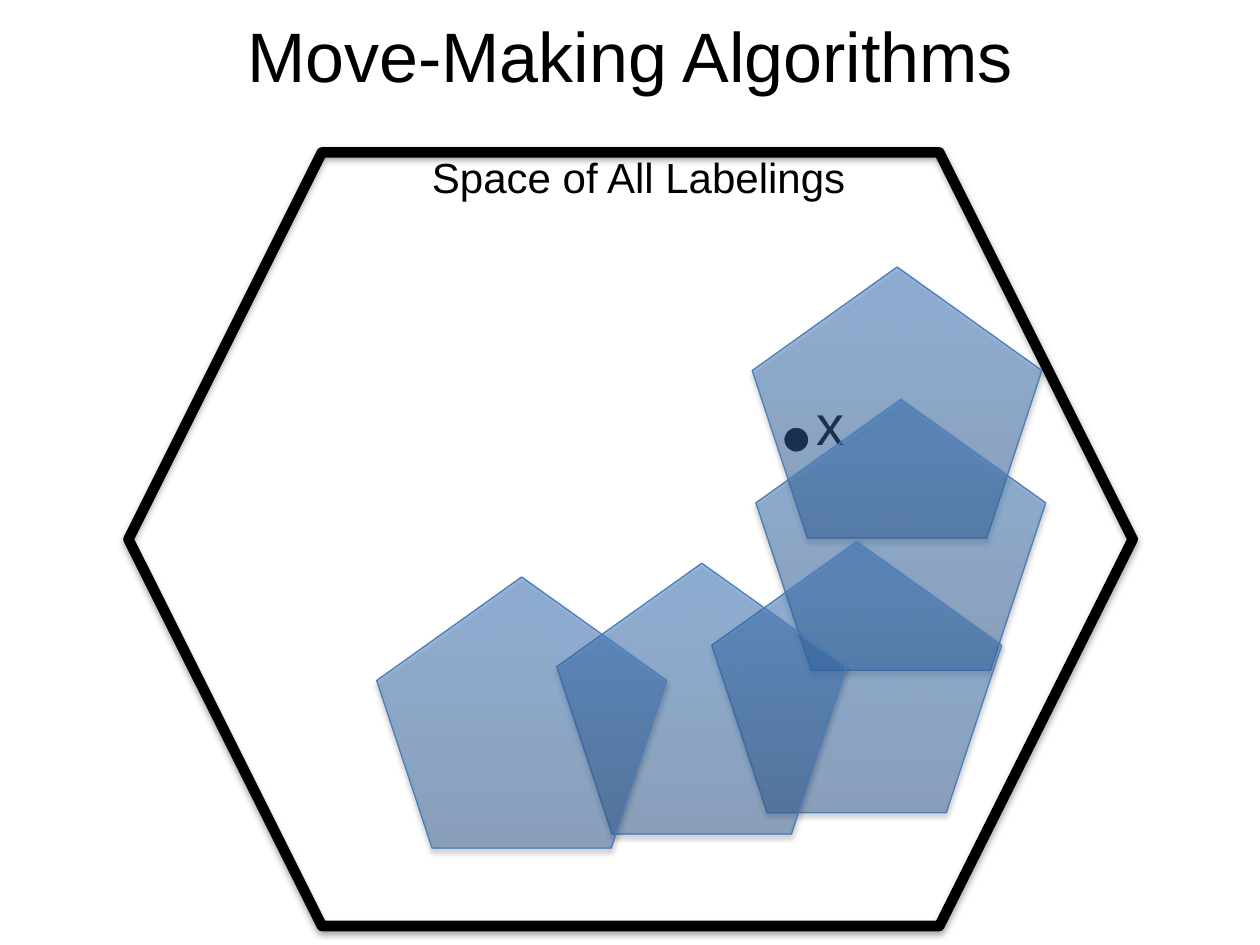
from dataclasses import dataclass

import pptx
import pptx.dml.color
import pptx.enum.shapes
import pptx.enum.text
import pptx.oxml
import pptx.oxml.ns
import pptx.util
from pptx.util import Inches

KIND = pptx.enum.shapes.MSO_SHAPE
qn = pptx.oxml.ns.qn


@dataclass(frozen=True)
class Theme:
    font: str = "Arial"
    ink: str = "000000"
    paper: str = "FFFFFF"
    edge: str = "4B7EBC"
    fade: tuple = ((0, "2F5F99"), (80, "3D7CC7"), (100, "3A7CCB"))
    alpha: int = 46
    shade: int = 35
    title: int = 40
    label: int = 24
    point: int = 32
    thick: float = 6
    thin: float = 0.75


LOOK = Theme()


def color(code):
    return pptx.dml.color.RGBColor.from_string(code)


def tint(code, alpha):
    """Return a colour element with an opacity in percent."""
    return pptx.oxml.parse_xml(
        f'<a:srgbClr {pptx.oxml.ns.nsdecls("a")} val="{code}">'
        f'<a:alpha val="{alpha * 1000}"/></a:srgbClr>')


def write(frame, text, size):
    run = frame.paragraphs[0].add_run()
    run.text = text
    run.font.name = LOOK.font
    run.font.size = pptx.util.Pt(size)
    run.font.color.rgb = color(LOOK.ink)


def shape(home, kind, box, line, width):
    item = home.shapes.add_shape(kind, *map(Inches, box))
    item.shadow.inherit = False
    item.line.color.rgb = color(line)
    item.line.width = pptx.util.Pt(width)
    return item


def label(home, box, text, size):
    frame = home.shapes.add_textbox(*map(Inches, box)).text_frame
    frame.word_wrap = False
    frame.auto_size = pptx.enum.text.MSO_AUTO_SIZE.SHAPE_TO_FIT_TEXT
    write(frame, text, size)


def shadow(item):
    effects = item._element.spPr.find(qn("a:effectLst"))
    drop = effects.makeelement(qn("a:outerShdw"), {
        "blurRad": str(pptx.util.Pt(3.1)), "dist": str(pptx.util.Pt(1.8)),
        "dir": "5400000", "rotWithShape": "0"})
    drop.append(tint(LOOK.ink, LOOK.shade))
    effects.append(drop)


def fade(item):
    """Fill with the see-through gradient, running from bottom to top."""
    item.fill.gradient()
    item.fill.gradient_angle = 90
    stops = item._element.spPr.find(qn("a:gradFill")).find(qn("a:gsLst"))
    for old in list(stops):
        stops.remove(old)
    for place, code in LOOK.fade:
        stop = stops.makeelement(qn("a:gs"), {"pos": str(place * 1000)})
        stop.append(tint(code, LOOK.alpha))
        stops.append(stop)


def title(slide, box, text):
    head = slide.shapes.title
    head.left, head.top, head.width, head.height = map(Inches, box)
    frame = head.text_frame
    frame.vertical_anchor = pptx.enum.text.MSO_ANCHOR.MIDDLE
    frame.paragraphs[0].alignment = pptx.enum.text.PP_ALIGN.CENTER
    write(frame, text, LOOK.title)


def space(slide, box):
    """Draw the outer hexagon and its caption."""
    left, top, _, _ = box
    hexagon = shape(slide, KIND.HEXAGON, box, LOOK.ink, LOOK.thick)
    hexagon.fill.background()
    shadow(hexagon)
    label(slide, (left + 2.31, top - 0.06, 3.51, 0.5),
          "Space of All Labelings", LOOK.label)


def point(slide, box):
    """Draw the current labeling: a dot and its name, grouped."""
    left, top, _, _ = box
    group = slide.shapes.add_group_shape()
    dot = shape(group, KIND.OVAL, (left, top + 0.35, 0.2, 0.2),
                LOOK.paper, LOOK.thin)
    dot.fill.solid()
    dot.fill.fore_color.rgb = color(LOOK.ink)
    label(group, (left + 0.16, top, 0.43, 0.64), "x", LOOK.point)


def move(slide, box):
    """Draw one search region."""
    region = shape(slide, KIND.REGULAR_PENTAGON, box, LOOK.edge, LOOK.thin)
    fade(region)
    shadow(region)


def main():
    deck = pptx.Presentation()
    deck.slide_width, deck.slide_height = Inches(10), Inches(7.5)
    slide = deck.slides.add_slide(deck.slide_layouts[5])
    title(slide, (0.5, 0.01, 9, 0.85), "Move-Making Algorithms")
    space(slide, (1.02, 1.21, 7.97, 6.14))
    point(slide, (6.22, 3.04, 0.59, 0.64))
    for left, top in ((5.97, 2.12), (6, 3.17), (5.65, 4.3),
                      (4.42, 4.47), (2.99, 4.58)):
        move(slide, (left, top, 2.3, 2.15))
    deck.save("out.pptx")


if __name__ == "__main__":
    main()
